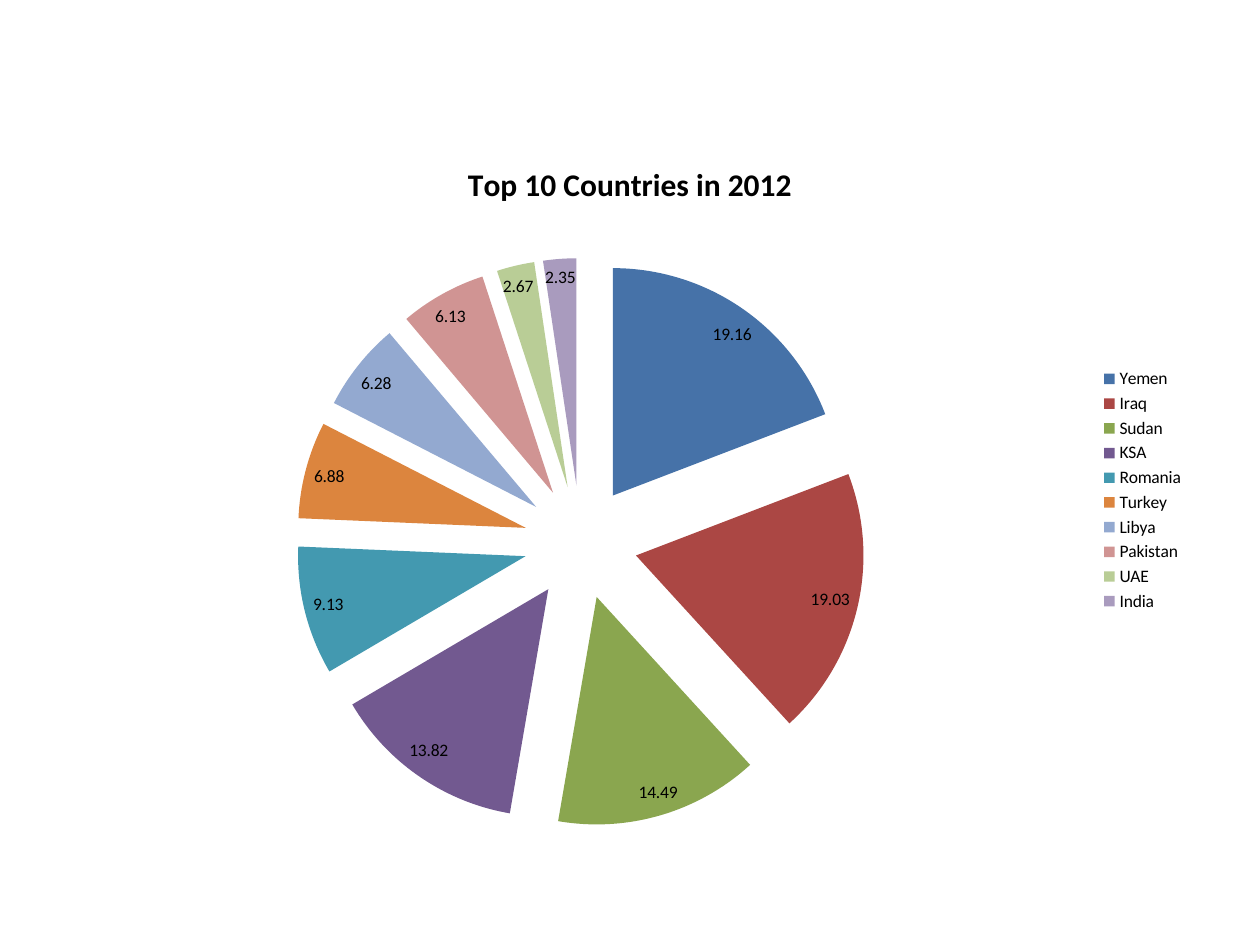
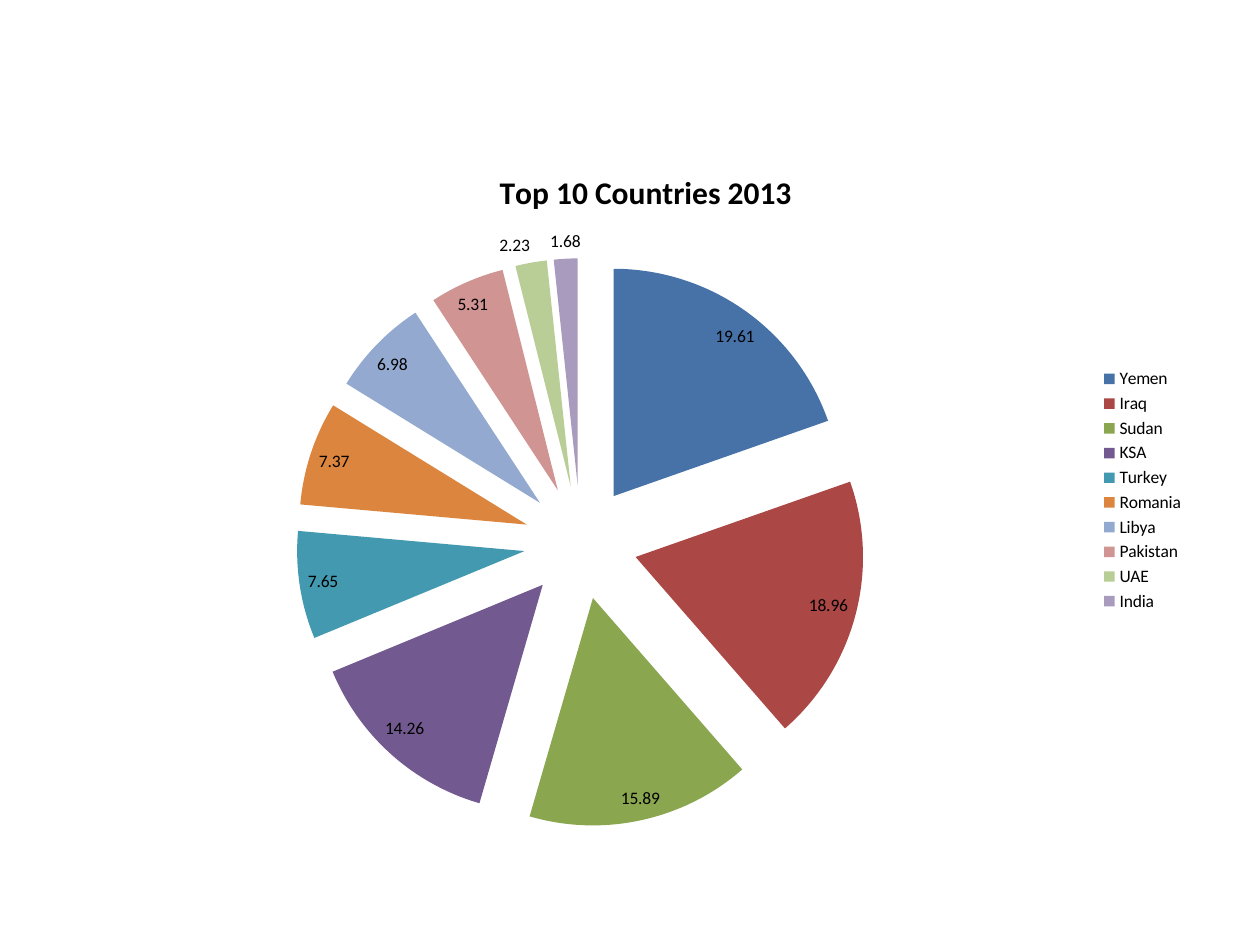
from lxml import etree
from pptx import Presentation
from pptx.chart.data import CategoryChartData
from pptx.dml.color import RGBColor
from pptx.enum.chart import XL_CHART_TYPE, XL_LABEL_POSITION, XL_LEGEND_POSITION
from pptx.oxml import parse_xml
from pptx.oxml.ns import nsdecls, qn
from pptx.util import Inches, Pt

PIE = XL_CHART_TYPE.PIE
BEST_FIT = XL_LABEL_POSITION.BEST_FIT
LEGEND_RIGHT = XL_LEGEND_POSITION.RIGHT

FONT = "Calibri"
BLACK = RGBColor(0x00, 0x00, 0x00)
SLICE_COLOURS = [
    RGBColor(0x46, 0x72, 0xA8),
    RGBColor(0xAB, 0x47, 0x44),
    RGBColor(0x8A, 0xA6, 0x4F),
    RGBColor(0x72, 0x59, 0x90),
    RGBColor(0x43, 0x99, 0xB0),
    RGBColor(0xDC, 0x85, 0x3E),
    RGBColor(0x93, 0xA9, 0xD0),
    RGBColor(0xD0, 0x94, 0x93),
    RGBColor(0xB9, 0xCD, 0x96),
    RGBColor(0xA9, 0x9B, 0xBE),
]
EXPLOSION = 25

# Title, title position as fractions of the chart (None = automatic), shares
YEARS = [
    ("Top 10 Countries in 2012", None, {
        "Yemen": 19.16, "Iraq": 19.03, "Sudan": 14.49, "KSA": 13.82,
        "Romania": 9.13, "Turkey": 6.88, "Libya": 6.28, "Pakistan": 6.13,
        "UAE": 2.67, "India": 2.35}),
    ("Top 10 Countries 2013", (0.38, 0.04), {
        "Yemen": 19.61, "Iraq": 18.96, "Sudan": 15.89, "KSA": 14.26,
        "Turkey": 7.65, "Romania": 7.37, "Libya": 6.98, "Pakistan": 5.31,
        "UAE": 2.23, "India": 1.68}),
]

presentation = Presentation()
presentation.slide_width = Inches(10)
presentation.slide_height = Inches(7.5)
blank_layout = presentation.slide_layouts[6]

for title, title_position, shares in YEARS:
    slide = presentation.slides.add_slide(blank_layout)

    # Pie chart
    chart_data = CategoryChartData()
    chart_data.categories = list(shares)
    chart_data.add_series("Series 1", list(shares.values()))
    chart = slide.shapes.add_chart(
        PIE, Inches(0.5), Inches(1.08), Inches(9), Inches(5.62), chart_data).chart
    chart.font.name = FONT
    chart.font.size = Pt(10)
    chart.font.color.rgb = BLACK

    # Title
    run = chart.chart_title.text_frame.paragraphs[0].add_run()
    run.text = title
    run.font.name = FONT
    run.font.size = Pt(18)
    run.font.bold = True
    run.font.color.rgb = BLACK
    chart.chart_title.include_in_layout = False
    if title_position:
        title_element = chart.chart_title._element
        for old_layout in title_element.findall(qn("c:layout")):
            title_element.remove(old_layout)
        layout = parse_xml(f"<c:layout {nsdecls('c')}/>")
        manual = etree.SubElement(layout, qn("c:manualLayout"))
        x, y = title_position
        for tag, value in (("xMode", "edge"), ("yMode", "edge"), ("x", x), ("y", y)):
            etree.SubElement(manual, qn(f"c:{tag}")).set("val", str(value))
        title_element.find(qn("c:tx")).addnext(layout)

    # Legend
    chart.has_legend = True
    chart.legend.position = LEGEND_RIGHT
    chart.legend.include_in_layout = False

    # Slices, pulled apart from the centre
    plot = chart.plots[0]
    plot.vary_by_categories = True
    series = plot.series[0]
    for index, colour in enumerate(SLICE_COLOURS):
        fill = series.points[index].format.fill
        fill.solid()
        fill.fore_color.rgb = colour
    explosion = parse_xml(f'<c:explosion {nsdecls("c")} val="{EXPLOSION}"/>')
    series._element.find(qn("c:dPt")).addprevious(explosion)

    # Value labels
    plot.has_data_labels = True
    labels = plot.data_labels
    labels.show_value = True
    labels.show_percentage = False
    labels.position = BEST_FIT

presentation.save("out.pptx")
